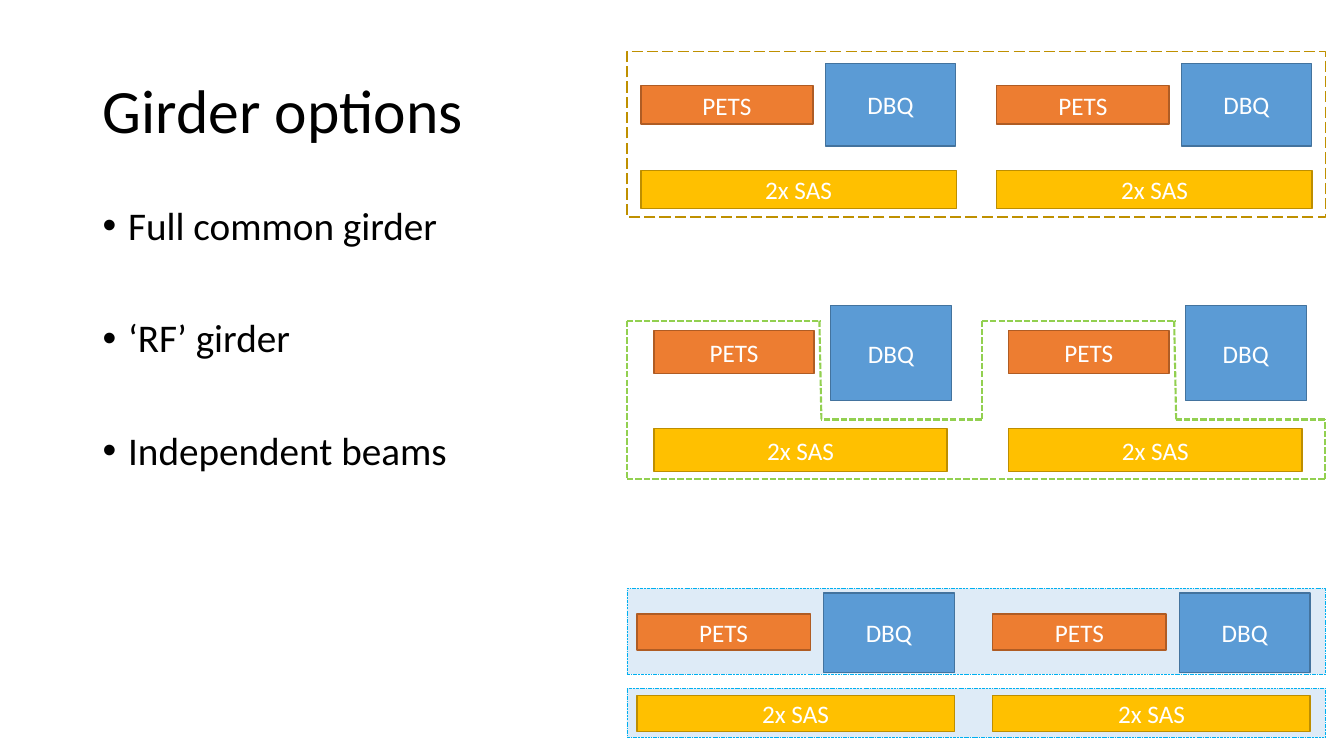
from lxml.etree import SubElement
from pptx import Presentation
from pptx.dml.color import RGBColor
from pptx.enum.shapes import MSO_CONNECTOR, MSO_SHAPE
from pptx.enum.text import MSO_ANCHOR, PP_ALIGN
from pptx.oxml.ns import qn
from pptx.util import Cm, Pt

# Content; all lengths in cm
TITLE = "Girder options"
BULLETS = ["Full common girder", "‘RF’ girder", "Independent beams"]
COLOURS = {"PETS": ("ED7D31", "AF5C24"), "DBQ": ("5B9BD5", "43739E"),
           "2x SAS": ("FFC000", "BD8E00")}

FULL_FRAME = dict(fill=None, line="BF9000", width=1, dash="lgDash")
BEAM_FRAME = dict(fill="DEEBF7", line="00B0F0", width=0.25,
                  dash="lgDashDotDot")

# Parts show the first bay; the second lies one pitch to the right
OPTIONS = [
    dict(pitch=8.97, frames=[((15.8, 1.3, 17.6, 4.17), FULL_FRAME)],
         parts={"PETS": (16.15, 2.16, 4.34, 0.97),
                "DBQ": (20.8, 1.6, 3.28, 2.08),
                "2x SAS": (16.15, 4.29, 7.95, 0.97)}),
    dict(pitch=8.94, frames=[],
         parts={"PETS": (16.48, 8.33, 4.04, 1.09),
                "DBQ": (20.93, 7.7, 3.05, 2.39),
                "2x SAS": (16.48, 10.8, 7.39, 1.09)}),
    dict(pitch=8.97, frames=[((15.8, 17.35, 17.6, 1.24), BEAM_FRAME),
                             ((15.8, 14.83, 17.6, 2.16), BEAM_FRAME)],
         parts={"PETS": (16.05, 15.47, 4.37, 0.91),
                "DBQ": (20.75, 14.94, 3.3, 2.01),
                "2x SAS": (16.05, 17.53, 8, 0.91)}),
]

# Outline of the RF girder: left, right and foot of the left wall per bay
TOP, LEDGE, BOTTOM = 8.08, 10.57, 12.07
BAYS = [(15.8, 24.74, BOTTOM), (24.74, 33.38, LEDGE)]
STEP = 4.9


def rgb(value):
    return RGBColor.from_string(value)


def place(s, box):
    for name, value in zip(("left", "top", "width", "height"), box):
        setattr(s, name, Cm(value))


def write(p, text, size, colour):
    r = p.add_run()
    r.text = text
    for name, value in dict(name="Calibri", size=Pt(size), bold=False).items():
        setattr(r.font, name, value)
    r.font.color.rgb = rgb(colour)


def set_line(s, colour, width, dash=None):
    s.line.color.rgb = rgb(colour)
    s.line.width = Pt(width)
    if dash:
        ln = s._element.spPr.find(qn("a:ln"))
        SubElement(ln, qn("a:prstDash")).set("val", dash)


def add_box(group, box, fill, line, width=1, dash=None, text=None):
    s = group.shapes.add_shape(MSO_SHAPE.RECTANGLE, *map(Cm, box))
    s.shadow.inherit = False
    if fill:
        s.fill.solid()
        s.fill.fore_color.rgb = rgb(fill)
    else:
        s.fill.background()
    set_line(s, line, width, dash)
    if text:
        s.text_frame.vertical_anchor = MSO_ANCHOR.MIDDLE
        p = s.text_frame.paragraphs[0]
        p.alignment = PP_ALIGN.CENTER
        write(p, text, 18, "FFFFFF")


def add_edge(group, *ends):
    s = group.shapes.add_connector(MSO_CONNECTOR.STRAIGHT, *map(Cm, ends))
    set_line(s, "92D050", 1.5, "sysDash")
    SubElement(s._element.spPr, qn("a:effectLst"))


def add_outline(group):
    for left, right, foot in BAYS:
        step = left + STEP
        add_edge(group, left, TOP, step, TOP)
        add_edge(group, left, TOP, left, foot)
        add_edge(group, left, BOTTOM, right, BOTTOM)
        add_edge(group, right, LEDGE, step, LEDGE)
        add_edge(group, step, LEDGE, step - 0.05, TOP)
    add_edge(group, right, BOTTOM, right, LEDGE)


def add_bullets(slide):
    s = slide.shapes.add_textbox(Cm(2.34), Cm(5.08), Cm(11.81), Cm(12.09))
    tf = s.text_frame
    tf.word_wrap = True
    for i, text in enumerate(BULLETS):
        p = tf.add_paragraph() if i else tf.paragraphs[0]
        p.line_spacing = 0.9
        p.space_before = Pt(50 if i else 0)
        pPr = p._p.get_or_add_pPr()
        pPr.set("marL", str(Cm(0.64)))
        pPr.set("indent", str(-Cm(0.64)))
        SubElement(pPr, qn("a:buFont")).set("typeface", "Arial")
        SubElement(pPr, qn("a:buChar")).set("char", "•")
        write(p, text, 28, "000000")


def main():
    prs = Presentation()
    prs.slide_width, prs.slide_height = Cm(33.87), Cm(19.05)
    slide = prs.slides.add_slide(prs.slide_layouts[5])

    # Title and bullets
    title = slide.shapes.title
    place(title, (2.34, 1.02, 29.21, 3.68))
    title.text_frame.vertical_anchor = MSO_ANCHOR.MIDDLE
    p = title.text_frame.paragraphs[0]
    p.alignment, p.line_spacing = PP_ALIGN.LEFT, 0.9
    write(p, TITLE, 44, "000000")
    add_bullets(slide)

    # One group per girder option
    for option in OPTIONS:
        group = slide.shapes.add_group_shape()
        for box, style in option["frames"]:
            add_box(group, box, **style)
        if not option["frames"]:
            add_outline(group)
        for shift in (0, option["pitch"]):
            for name, (x, *rest) in option["parts"].items():
                add_box(group, (x + shift, *rest), *COLOURS[name], text=name)

    prs.save("out.pptx")


if __name__ == "__main__":
    main()
